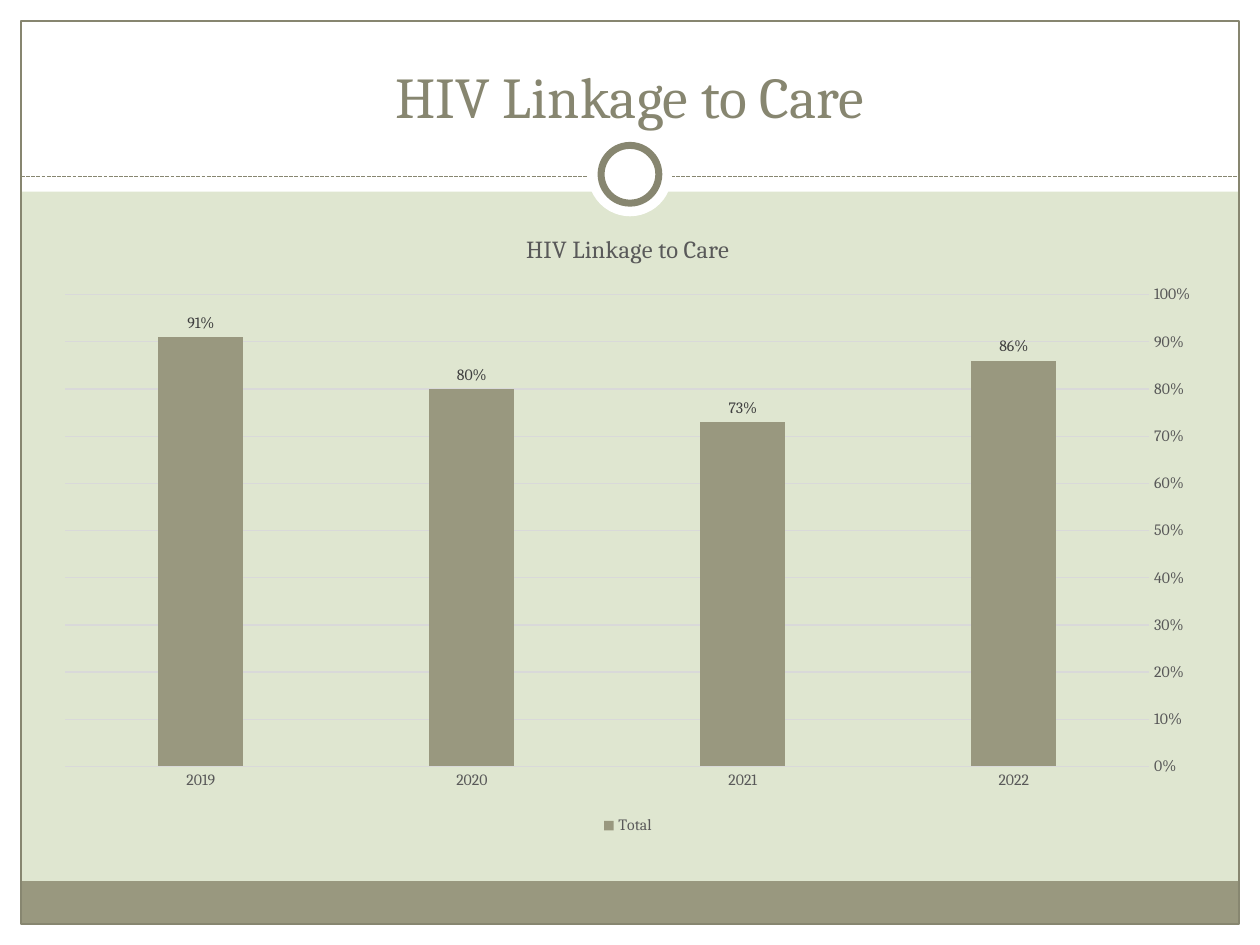
from lxml import etree
from pptx import Presentation
from pptx.chart.data import CategoryChartData
from pptx.dml.color import RGBColor
from pptx.enum import chart as ce, dml, shapes, text
from pptx.oxml.ns import qn
from pptx.util import Pt

WHITE = RGBColor(0xFF, 0xFF, 0xFF)
SAGE = RGBColor(0xDF, 0xE6, 0xD0)
OLIVE = RGBColor(0x99, 0x98, 0x7F)
DARK_OLIVE = RGBColor(0x87, 0x86, 0x70)
GRID = RGBColor(0xD9, 0xD9, 0xD9)
GREY = RGBColor(0x59, 0x59, 0x59)
LABEL = RGBColor(0x40, 0x40, 0x40)
FONT = "Cambria"
WIDTH, HEIGHT = 720, 540
MARGIN = 12
HEADING = "HIV Linkage to Care"


def set_font(font, size, color):
    font.name = FONT
    font.size = Pt(size)
    font.bold = False
    font.color.rgb = color


def add_block(slide, box, fill=None, line=None, weight=0.75,
              kind=shapes.MSO_SHAPE.RECTANGLE):
    block = slide.shapes.add_shape(kind, *map(Pt, box))
    block.shadow.inherit = False
    if fill is None:
        block.fill.background()
    else:
        block.fill.solid()
        block.fill.fore_color.rgb = fill
    if line is None:
        block.line.fill.background()
    else:
        block.line.color.rgb = line
        block.line.width = Pt(weight)


def add_frame(slide, width, height, margin):
    # White header and page edges
    for edge in ((0, height - margin, width, margin),
                 (0, 0, width, 109.5),
                 (0, 0, margin, height),
                 (width - margin, 0, margin, height)):
        add_block(slide, edge, WHITE)
    # Footer band and outline
    inner = width - 2 * margin
    add_block(slide, (margin, 503.5, inner, height - margin - 503.5), OLIVE)
    add_block(slide, (margin, margin, inner, height - 2 * margin),
              line=DARK_OLIVE)


def add_divider(slide, left, right, top):
    rule = slide.shapes.add_connector(
        shapes.MSO_CONNECTOR.STRAIGHT, Pt(left), Pt(top), Pt(right), Pt(top))
    rule.line.color.rgb = DARK_OLIVE
    rule.line.width = Pt(0.75)
    rule.line.dash_style = dml.MSO_LINE.SQUARE_DOT
    etree.SubElement(rule._element.spPr, qn("a:effectLst"))

    # Ring centred on the rule
    center_x, center_y = (left + right) / 2, top - 1.2
    for diameter, line in ((48, None), (33, DARK_OLIVE)):
        radius = diameter / 2
        add_block(slide, (center_x - radius, center_y - radius,
                          diameter, diameter),
                  WHITE, line, 4, shapes.MSO_SHAPE.OVAL)


def add_heading(slide, box):
    frame = slide.shapes.add_textbox(*map(Pt, box)).text_frame
    frame.word_wrap = True
    frame.vertical_anchor = text.MSO_ANCHOR.BOTTOM
    heading = frame.paragraphs[0]
    heading.text = HEADING
    heading.alignment = text.PP_ALIGN.CENTER
    set_font(heading.font, 33, DARK_OLIVE)


def add_linkage_chart(slide, box):
    data = CategoryChartData(number_format="0%")
    data.categories = ["2022", "2021", "2020", "2019"]
    data.add_series("Total", (0.86, 0.73, 0.80, 0.91))
    chart = slide.shapes.add_chart(
        ce.XL_CHART_TYPE.COLUMN_CLUSTERED, *map(Pt, box), data).chart
    set_font(chart.font, 10, GREY)

    # Title and legend
    chart.has_title = True
    title = chart.chart_title.text_frame.paragraphs[0]
    title.text = HEADING
    set_font(title.font, 14, GREY)
    chart.chart_title.include_in_layout = False
    chart.has_legend = True
    chart.legend.position = ce.XL_LEGEND_POSITION.BOTTOM
    chart.legend.include_in_layout = False
    set_font(chart.legend.font, 9, GREY)

    # Axes: years run backwards, so the values stand on the right
    years, shares = chart.category_axis, chart.value_axis
    for axis in (years, shares):
        axis.major_tick_mark = axis.minor_tick_mark = ce.XL_TICK_MARK.NONE
        set_font(axis.tick_labels.font, 9, GREY)
    years.reverse_order = True
    shares.minimum_scale, shares.maximum_scale = 0, 1
    shares.major_unit = 0.1
    shares.tick_labels.number_format = "0%"
    shares.tick_labels.number_format_is_linked = False
    shares.format.line.fill.background()
    for line in (years.format.line, shares.major_gridlines.format.line):
        line.color.rgb = GRID
        line.width = Pt(0.75)

    # Columns and their labels
    plot = chart.plots[0]
    plot.vary_by_categories = False
    plot.gap_width, plot.overlap = 219, -27
    total = plot.series[0]
    total.format.fill.solid()
    total.format.fill.fore_color.rgb = OLIVE
    labels = total.data_labels
    labels.show_value = True
    labels.position = ce.XL_LABEL_POSITION.OUTSIDE_END
    labels.number_format = "0%"
    labels.number_format_is_linked = False
    set_font(labels.font, 9, LABEL)


def main():
    deck = Presentation()
    deck.slide_width, deck.slide_height = Pt(WIDTH), Pt(HEIGHT)
    slide = deck.slides.add_slide(deck.slide_layouts[6])
    slide.background.fill.solid()
    slide.background.fill.fore_color.rgb = SAGE

    add_frame(slide, WIDTH, HEIGHT, MARGIN)
    add_divider(slide, MARGIN, WIDTH - MARGIN, 100.8)
    add_heading(slide, (24, 18, 672, 60))
    add_linkage_chart(slide, (24, 120, 669.6, 360))
    deck.save("out.pptx")


if __name__ == "__main__":
    main()
